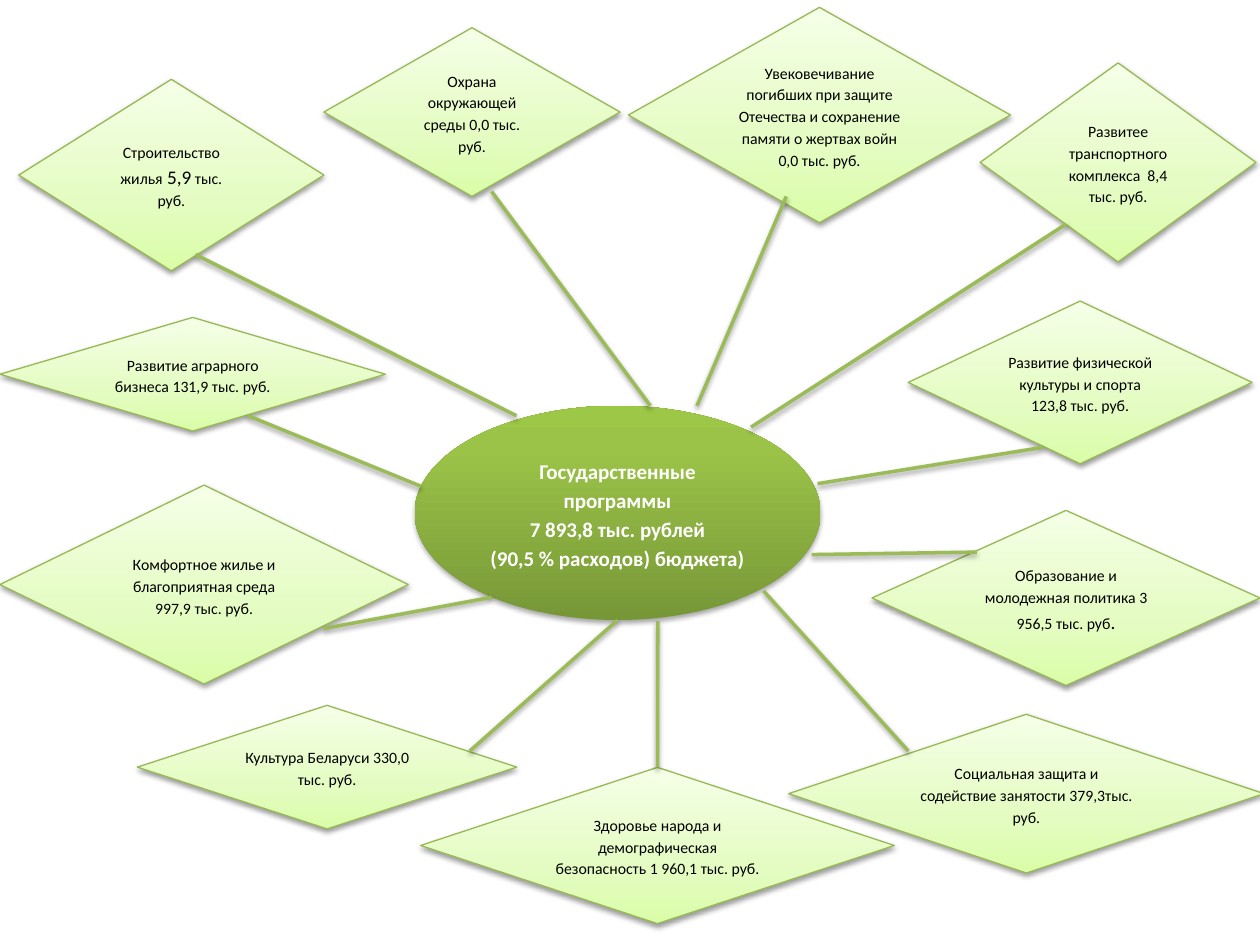
from lxml import etree
from pptx import Presentation
from pptx.dml.color import RGBColor
from pptx.enum.shapes import MSO_CONNECTOR, MSO_SHAPE
from pptx.enum.text import MSO_ANCHOR, PP_ALIGN
from pptx.oxml import parse_xml
from pptx.oxml.ns import nsdecls, qn
from pptx.util import Cm, Pt

OVAL = MSO_SHAPE.OVAL
DIAMOND = MSO_SHAPE.FLOWCHART_DECISION
LINE = MSO_CONNECTOR.STRAIGHT
MIDDLE = MSO_ANCHOR.MIDDLE
CENTER = PP_ALIGN.CENTER
TOP = 0

FONT = "Calibri"
COLORS = {"text": "000000", "light": "FFFFFF", "edge": "98B955",
          "spoke": "9BBB59", "shadow": "000000"}
# Gradient stops run from the bottom edge to the top
HUB_FILL = [(0, "779737"), (80, "9BC348"), (100, "9DC746")]
NODE_FILL = [(0, "DAFDA7"), (35, "E4FCC2"), (100, "F5FFE7")]

HUB_BOX = (8.36, 8.18, 8.18, 4.32)
HUB_TEXT = ["Государственные программы", "7 893,8 тыс. рублей",
            "(90,5 % расходов) бюджета)"]

# Each program: box, spoke (hub end, program end), space after, runs
PROGRAMS = [
    ((12.67, 0.15, 7.7, 4.34), (14.05, 8.18, 15.85, 3.96), 0,
     [("Увековечивание погибших при защите Отечества и сохранение "
       "памяти о жертвах войн 0,0 тыс. руб.", 9)]),
    ((6.53, 0.56, 5.97, 3.4), (13.11, 8.18, 9.91, 3.86), 10,
     [("Охрана окружающей среды 0,0 тыс. руб.", 9)]),
    ((0.38, 1.6, 6.15, 3.86), (10.41, 8.38, 3.94, 5.13), 0,
     [("Строительство жилья", 9), (" 5,9", 11), (" тыс.", 9),
      (" ", 11), ("руб.", 9)]),
    ((19.76, 1.27, 5.56, 4.01), (15.14, 8.61, 21.49, 4.52), 10,
     [("Развитее транспортного комплекса  8,4 тыс. руб.", 9)]),
    ((18.31, 6.07, 6.93, 3.28), (16.48, 9.75, 21.01, 9.02), 10,
     [("Развитие физической культуры и спорта 123,8 тыс. руб.", 9)]),
    ((17.58, 10.29, 7.82, 3.53), (16.36, 11.18, 19.69, 11.13), 10,
     [("Образование и молодежная политика 3 956,5 тыс. руб", 9), (".", 11)]),
    ((15.9, 14.4, 9.58, 3.2), (15.39, 11.91, 18.31, 15.14), 10,
     [("Социальная защита и содействие занятости 379,3тыс. руб.", 9)]),
    ((8.48, 15.47, 9.55, 3.15), (13.26, 12.52, 13.26, 15.47), 10,
     [("Здоровье народа и демографическая безопасность "
       "1 960,1 тыс. руб.", 9)]),
    ((2.77, 14.22, 7.65, 2.49), (12.45, 12.5, 9.47, 15.14), 10,
     [("Культура Беларуси 330,0 тыс. руб.", 9)]),
    ((0, 6.4, 7.77, 2.29), (8.48, 9.8, 5, 8.38), 10,
     [("Развитие аграрного бизнеса 131,9 тыс. руб.", 9)]),
    ((0, 9.78, 8.23, 4.01), (9.91, 12.04, 6.53, 12.67), 10,
     [("Комфортное жилье и благоприятная среда 997,9 тыс. руб.", 9)]),
]
HEALTH = 7  # its spoke ends at the top corner


def rgb(name):
    return RGBColor.from_string(COLORS[name])


def add_shade(props, dist, alpha):
    """Put a soft shadow below the shape or line."""
    for old in props.findall(qn("a:effectLst")):
        props.remove(old)
    effects = etree.SubElement(props, qn("a:effectLst"))
    effects.append(parse_xml(
        f'<a:outerShdw {nsdecls("a")} blurRad="{Pt(3.1)}" dist="{Pt(dist)}" '
        f'dir="5400000" rotWithShape="0"><a:srgbClr val="{COLORS["shadow"]}">'
        f'<a:alpha val="{alpha * 1000}"/></a:srgbClr></a:outerShdw>'))


def add_body(slide, kind, box, stops):
    """Add a shape with a vertical gradient and centred text."""
    shape = slide.shapes.add_shape(kind, *map(Cm, box))
    shape.shadow.inherit = False
    shape.fill.gradient()
    grad = shape.element.spPr.find(qn("a:gradFill"))
    marks = "".join(f'<a:gs pos="{pos * 1000}"><a:srgbClr val="{color}"/></a:gs>'
                    for pos, color in stops)
    grad.getparent().replace(grad, parse_xml(
        f'<a:gradFill {nsdecls("a")} rotWithShape="1"><a:gsLst>{marks}</a:gsLst>'
        '<a:lin ang="16200000" scaled="0"/></a:gradFill>'))
    shape.text_frame.word_wrap = True
    shape.text_frame.vertical_anchor = MIDDLE
    return shape


def style_par(par, after=0):
    par.alignment = CENTER
    par.line_spacing = 1.15
    par.space_after = Pt(after)


def style_run(run, size, color, bold=False):
    run.font.name = FONT
    run.font.size = Pt(size)
    run.font.bold = bold
    run.font.color.rgb = rgb(color)


def add_hub(slide, box):
    hub = add_body(slide, OVAL, box, HUB_FILL)
    hub.line.fill.background()
    add_shade(hub.element.spPr, 1.8, 35)
    hub.text_frame.text = "\n".join(HUB_TEXT)
    for par in hub.text_frame.paragraphs:
        style_par(par)
        style_run(par.runs[0], 12, "light", True)


def add_node(slide, box, after, runs):
    node = add_body(slide, DIAMOND, box, NODE_FILL)
    node.line.color.rgb = rgb("edge")
    node.line.width = Pt(0.75)
    add_shade(node.element.spPr, 1.6, 38)
    par = node.text_frame.paragraphs[0]
    style_par(par, after)
    for text, size in runs:
        run = par.add_run()
        run.text = text
        style_run(run, size, "text")
    return node


def add_spoke(slide, ends):
    spoke = slide.shapes.add_connector(LINE, *map(Cm, ends))
    spoke.line.color.rgb = rgb("spoke")
    spoke.line.width = Pt(2)
    add_shade(spoke.element.spPr, 1.6, 38)
    return spoke


def main():
    deck = Presentation()
    deck.slide_width, deck.slide_height = Cm(25.4), Cm(19.05)
    slide = deck.slides.add_slide(deck.slide_layouts[6])

    # Hub and programs around it
    add_hub(slide, HUB_BOX)
    nodes = [add_node(slide, box, after, runs)
             for box, _, after, runs in PROGRAMS]

    # Spokes lie over the shapes
    spokes = [add_spoke(slide, ends) for _, ends, _, _ in PROGRAMS]
    spokes[HEALTH].end_connect(nodes[HEALTH], TOP)

    deck.save("out.pptx")


if __name__ == "__main__":
    main()
